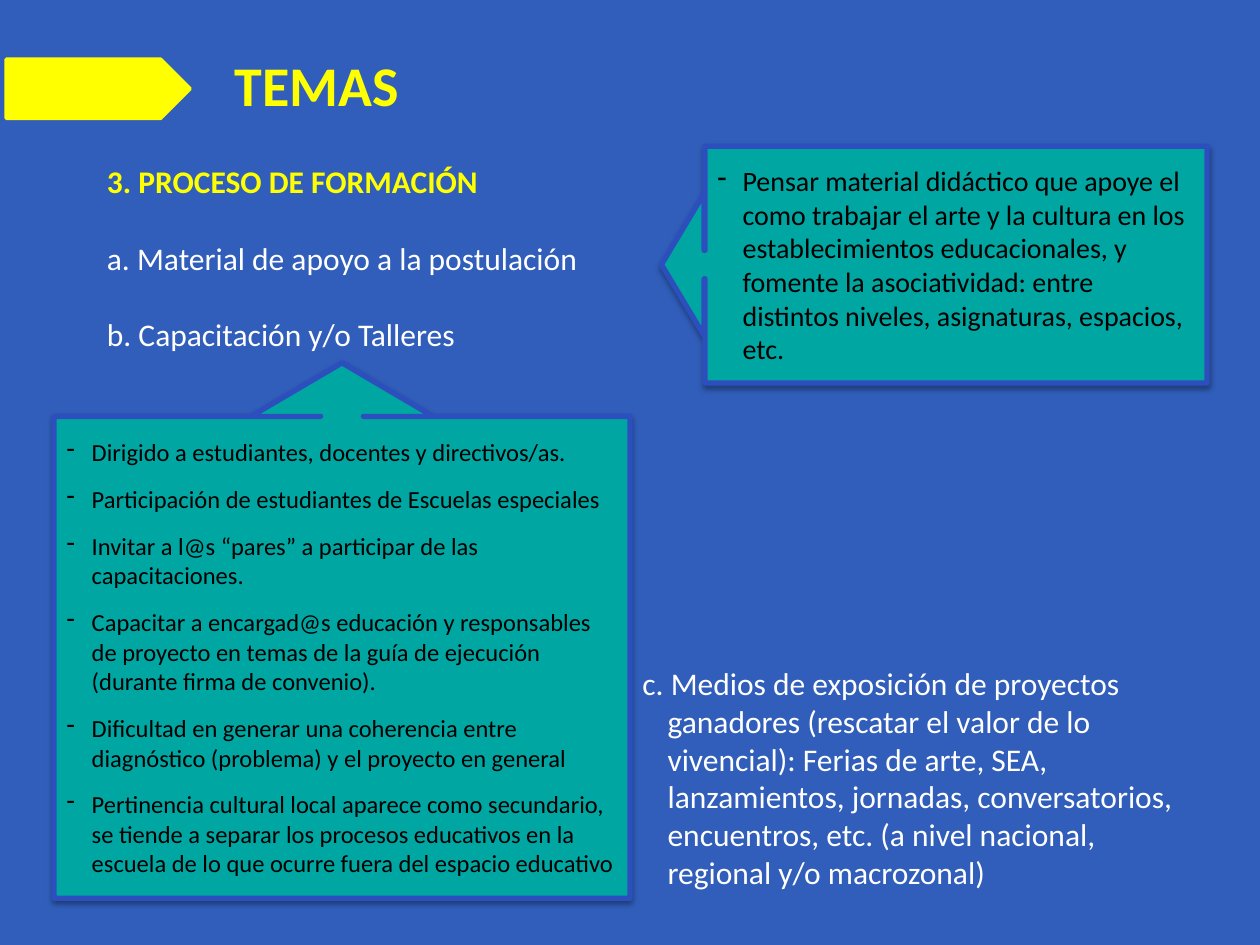
from dataclasses import dataclass

from lxml import etree
from pptx import Presentation
from pptx import util as u
from pptx.dml.color import RGBColor
from pptx.enum import shapes, text
from pptx.oxml import ns


@dataclass(frozen=True)
class Theme:
    font: str = "Calibri"
    background: str = "305EBA"
    accent: str = "FFFF00"
    light: str = "FFFFFF"
    dark: str = "000000"
    callout: str = "00A6A2"
    border: str = "2D4FBD"
    title: int = 32
    body: int = 18
    note: int = 16
    detail: int = 14


THEME = Theme()
HANGING = 0.2

MATERIAL_NOTES = [
    "Pensar material didáctico que apoye el como trabajar el arte y la cultura "
    "en los establecimientos educacionales, y fomente la asociatividad: entre "
    "distintos niveles, asignaturas, espacios, etc.",
]
TRAINING_NOTES = [
    "Dirigido a estudiantes, docentes y directivos/as.",
    "Participación de estudiantes de Escuelas especiales",
    "Invitar a l@s “pares” a participar de las capacitaciones.",
    "Capacitar a encargad@s educación y responsables de proyecto en temas de la "
    "guía de ejecución (durante firma de convenio).",
    "Dificultad en generar una coherencia entre diagnóstico (problema) y el "
    "proyecto en general",
    "Pertinencia cultural local aparece como secundario, se tiende a separar los "
    "procesos educativos en la escuela de lo que ocurre fuera del espacio educativo",
]
EXHIBITION = (
    "c. Medios de exposición de proyectos ganadores (rescatar el valor de lo "
    "vivencial): Ferias de arte, SEA, lanzamientos, jornadas, conversatorios, "
    "encuentros, etc. (a nivel nacional, regional y/o macrozonal)"
)


def rgb(color):
    return RGBColor.from_string(color)


def inches(box):
    return [u.Inches(value) for value in box]


def style(paragraph, size, color, bold=False, after=0, hanging=False, bullet=None):
    paragraph.alignment = text.PP_ALIGN.LEFT
    paragraph.space_after = u.Pt(after)
    properties = paragraph._p.get_or_add_pPr()
    if hanging:
        properties.set("marL", str(u.Inches(HANGING)))
        properties.set("indent", str(-u.Inches(HANGING)))
    if bullet:
        etree.SubElement(properties, ns.qn("a:buChar"), char=bullet)
    font = paragraph.font
    font.name, font.size, font.bold = THEME.font, u.Pt(size), bold
    font.color.rgb = rgb(color)


def write(frame, lines, **look):
    """Fill the frame with one paragraph per line, all in the same look."""
    frame.word_wrap = True
    for number, line in enumerate(lines):
        paragraph = frame.add_paragraph() if number else frame.paragraphs[0]
        paragraph.text = line
        style(paragraph, **look)


def add_text(slide, box, lines, **look):
    frame = slide.shapes.add_textbox(*inches(box)).text_frame
    write(frame, lines, **look)
    return frame


def add_panel(slide, kind, box, fill, line, width):
    panel = slide.shapes.add_shape(kind, *inches(box))
    panel.fill.solid()
    panel.fill.fore_color.rgb = rgb(fill)
    panel.line.color.rgb = rgb(line)
    panel.line.width = u.Pt(width)
    panel.shadow.inherit = False
    return panel


def add_soft_shadow(panel):
    effects = panel._element.spPr.find(ns.qn("a:effectLst"))
    shadow = etree.SubElement(
        effects, ns.qn("a:outerShdw"), blurRad=str(u.Pt(3.1)),
        dist=str(u.Pt(1.8)), dir="5400000", rotWithShape="0")
    color = etree.SubElement(shadow, ns.qn("a:srgbClr"), val=THEME.dark)
    etree.SubElement(color, ns.qn("a:alpha"), val="35000")


def add_callout(slide, kind, box, adjustments, notes, size, after=0):
    callout = add_panel(slide, kind, box, THEME.callout, THEME.border, 3)
    for index, value in enumerate(adjustments):
        callout.adjustments[index] = value
    add_soft_shadow(callout)
    callout.text_frame.vertical_anchor = text.MSO_ANCHOR.MIDDLE
    write(callout.text_frame, notes, size=size, color=THEME.dark,
          after=after, hanging=True, bullet="-")


def add_title(slide, box, words):
    title = slide.shapes.title
    title.left, title.top, title.width, title.height = inches(box)
    frame = title.text_frame
    frame.vertical_anchor = text.MSO_ANCHOR.TOP
    frame.auto_size = text.MSO_AUTO_SIZE.NONE
    write(frame, [words], size=THEME.title, color=THEME.accent, bold=True)


def main():
    deck = Presentation()
    deck.slide_width, deck.slide_height = u.Inches(10), u.Inches(7.5)
    slide = deck.slides.add_slide(deck.slide_layouts[5])
    slide.background.fill.solid()
    slide.background.fill.fore_color.rgb = rgb(THEME.background)

    # Heading with its marker
    add_panel(slide, shapes.MSO_SHAPE.PENTAGON, (0.05, 0.47, 1.46, 0.47),
              THEME.accent, THEME.accent, 2)
    add_title(slide, (1.76, 0.35, 4.5, 0.64), "TEMAS")

    # Training process: section heading and its first topics
    topics = add_text(
        slide, (0.75, 1.24, 4.49, 4.04),
        ["3. PROCESO DE FORMACIÓN", "a. Material de apoyo a la postulación",
         "b. Capacitación y/o Talleres"],
        size=THEME.body, color=THEME.light, after=22)
    section = topics.paragraphs[0].font
    section.bold = True
    section.color.rgb = rgb(THEME.accent)

    # Notes pointing at topics a and b
    add_callout(slide, shapes.MSO_SHAPE.LEFT_ARROW_CALLOUT,
                (5.25, 1.16, 4.33, 1.88), (0.12, 0.3, 0.18, 0.92),
                MATERIAL_NOTES, THEME.note)
    add_callout(slide, shapes.MSO_SHAPE.UP_ARROW_CALLOUT,
                (0.43, 2.88, 4.57, 4.25), (0.08, 0.17, 0.1, 0.9),
                TRAINING_NOTES, THEME.detail, after=10)

    # Topic c
    add_text(slide, (5, 5.22, 4.58, 1.92), [EXHIBITION],
             size=THEME.body, color=THEME.light, hanging=True)

    deck.save("out.pptx")


if __name__ == "__main__":
    main()
